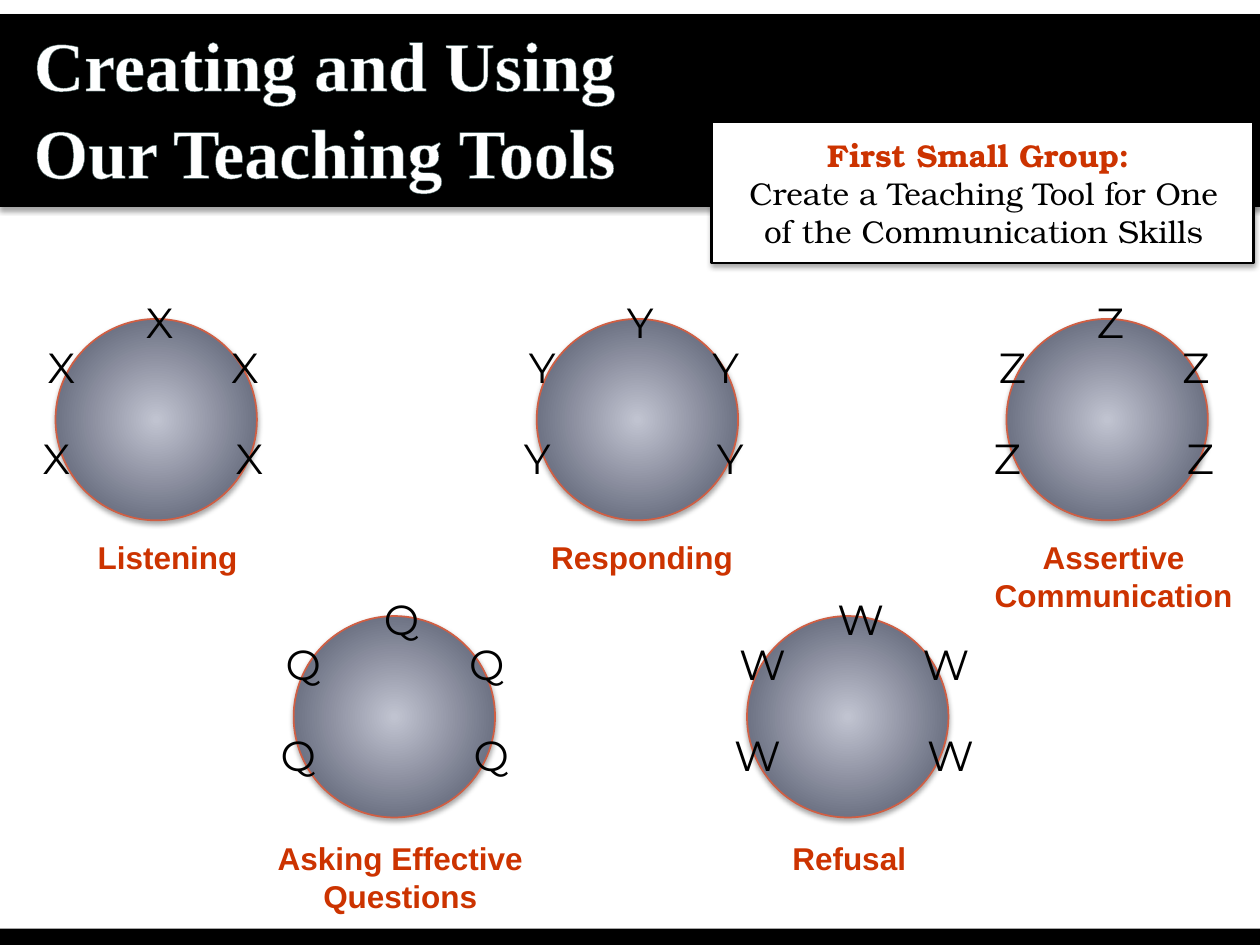
from lxml import etree
from pptx import Presentation
from pptx import util as u
from pptx.dml.color import RGBColor
from pptx.enum import shapes, text
from pptx.oxml import parse_xml
from pptx.oxml.ns import qn

BLACK = RGBColor(0x00, 0x00, 0x00)
WHITE = RGBColor(0xFF, 0xFF, 0xFF)
RED = RGBColor(0xCC, 0x33, 0x00)
CORAL = RGBColor(0xD0, 0x5F, 0x44)
TEAL = RGBColor(0x41, 0x5B, 0x5C)
PALE = RGBColor(0xC0, 0xC3, 0xD0)
SLATE = RGBColor(0x4B, 0x50, 0x64)
NS = 'xmlns:a="http://schemas.openxmlformats.org/drawingml/2006/main"'


def add_form(home, kind, box, fill, line=None, width=0, shade=False):
    form = home.add_shape(kind, *[u.Cm(n) for n in box])
    form.fill.solid()
    form.fill.fore_color.rgb = fill
    if line is None:
        form.line.fill.background()
    else:
        form.line.color.rgb = line
        form.line.width = u.Pt(width)
    form.shadow.inherit = False
    if shade:
        form._element.spPr.find(qn("a:effectLst")).append(parse_xml(
            f'<a:outerShdw {NS} blurRad="39370" dist="22860" dir="5400000" rotWithShape="0">'
            f'<a:srgbClr val="{BLACK}"><a:alpha val="35000"/></a:srgbClr></a:outerShdw>'))
    return form


def add_run(para, words, face, size, color, bold=False, edge=None, width=0):
    run = para.add_run()
    run.text = words
    run.font.name = face
    run.font.size = u.Pt(size)
    run.font.bold = bold
    run.font.color.rgb = color
    if edge is not None:
        run.font._element.insert(0, parse_xml(
            f'<a:ln {NS} w="{int(u.Pt(width))}"><a:solidFill>'
            f'<a:srgbClr val="{edge}"/></a:solidFill></a:ln>'))


deck = Presentation()
deck.slide_width, deck.slide_height = u.Cm(25.4), u.Cm(19.05)
slide = deck.slides.add_slide(deck.slide_layouts[6])
rect = shapes.MSO_SHAPE.RECTANGLE
oval = shapes.MSO_SHAPE.OVAL

add_form(slide.shapes, rect, (0, 0.33, 25.6, 3.81), BLACK, BLACK, 2.25, True)

title = slide.shapes.add_textbox(u.Cm(0.43), u.Cm(0.53), u.Cm(13.92), u.Cm(3.18))
title.text_frame.word_wrap = True
title.text_frame.vertical_anchor = text.MSO_ANCHOR.MIDDLE
para = title.text_frame.paragraphs[0]
para.line_spacing = 1.04
add_run(para, "Creating and Using", "Times New Roman", 40, WHITE, True, TEAL, 0.75)
para.add_line_break()
add_run(para, "Our Teaching Tools", "Times New Roman", 40, WHITE, True, TEAL, 0.75)

add_form(slide.shapes, rect, (14.35, 2.46, 10.92, 2.84), WHITE, BLACK, 1.5, True)
task = slide.shapes.add_textbox(u.Cm(14.66), u.Cm(2.62), u.Cm(10.34), u.Cm(2.57))
task.text_frame.word_wrap = True
para = task.text_frame.paragraphs[0]
para.alignment = text.PP_ALIGN.CENTER
add_run(para, "First Small Group: ", "TeX Gyre Bonum", 18, RED, True)
para.add_line_break()
add_run(para, "Create a Teaching Tool for One of the Communication Skills",
        "TeX Gyre Bonum", 18, BLACK)

seats = [(1.57, -0.58), (3.29, 0.33), (3.38, 2.16), (-0.41, 0.33), (-0.51, 2.16)]
groups = [
    ("X", 1.12, 6.43, "Listening", (1.45, 10.72, 3.86, 1.02)),
    ("Y", 10.82, 6.43, "Responding", (10.67, 10.72, 4.55, 1.02)),
    ("Q", 5.92, 12.42, "Asking Effective Questions", (4.83, 16.79, 6.48, 1.8)),
    ("Z", 20.29, 6.43, "Assertive Communication", (19.48, 10.72, 5.94, 1.8)),
    ("W", 15.06, 12.42, "Refusal", (15.19, 16.79, 3.86, 1.02)),
]
for mark, left, top, skill, box in groups:
    group = slide.shapes.add_group_shape().shapes
    table = add_form(group, oval, (left, top, 4.06, 4.06), PALE, CORAL, 1, True)
    props = table._element.spPr
    props.replace(props.find(qn("a:solidFill")), parse_xml(
        f'<a:gradFill {NS} rotWithShape="1"><a:gsLst>'
        f'<a:gs pos="1000"><a:srgbClr val="{PALE}"/></a:gs>'
        f'<a:gs pos="100000"><a:srgbClr val="{SLATE}"/></a:gs></a:gsLst>'
        '<a:path path="circle"><a:fillToRect l="50000" t="50000" r="50000" b="50000"/>'
        '</a:path></a:gradFill>'))
    for dx, dy in seats:
        seat = group.add_textbox(u.Cm(left + dx), u.Cm(top + dy), u.Cm(0.91), u.Cm(1.27))
        seat.text_frame.word_wrap = True
        add_run(seat.text_frame.paragraphs[0], mark, "Montserrat", 24, BLACK,
                edge=WHITE, width=1)
    label = add_form(group, rect, box, WHITE)
    tint = label._element.spPr.find(qn("a:solidFill"))[0]
    etree.SubElement(tint, qn("a:alpha")).set("val", "50000")
    label.text_frame.word_wrap = True
    label.text_frame.vertical_anchor = text.MSO_ANCHOR.TOP
    para = label.text_frame.paragraphs[0]
    para.alignment = text.PP_ALIGN.CENTER
    add_run(para, skill, "Arial", 18, RED, True)

add_form(slide.shapes, rect, (0, 18.72, 25.6, 0.33), BLACK)

deck.save("out.pptx")
